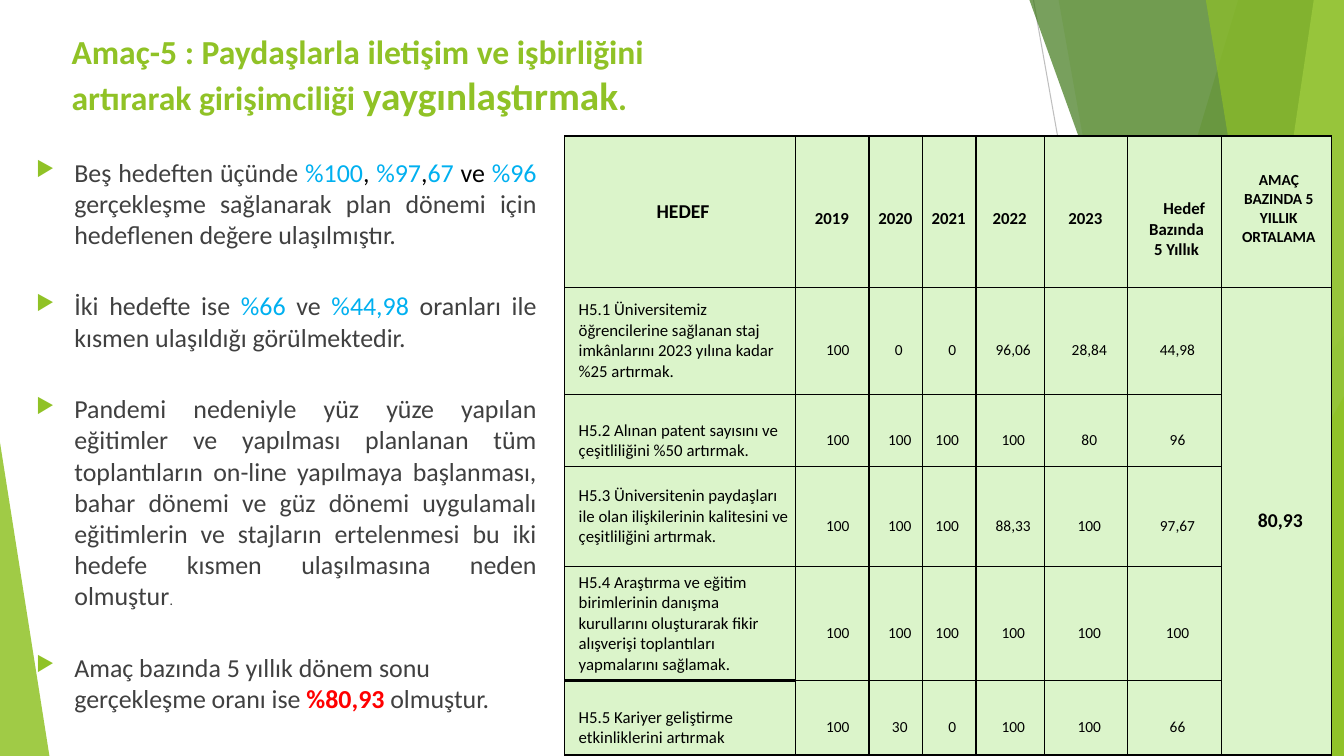
from dataclasses import dataclass

import pptx
import pptx.dml.color
import pptx.enum.shapes
import pptx.enum.text
import pptx.oxml.ns
import pptx.util
from lxml import etree

Inches, Pt = pptx.util.Inches, pptx.util.Pt
PP_ALIGN, MSO_ANCHOR = pptx.enum.text.PP_ALIGN, pptx.enum.text.MSO_ANCHOR
qn = pptx.oxml.ns.qn

GREEN, BLUE, BLACK, GREY, MINT = "90C226", "00B0F0", "000000", "404040", "DBF4CA"
W, H = 13.33, 7.5


@dataclass
class Line:
    start: tuple[float, float]
    end: tuple[float, float]
    color: str


@dataclass
class Band:
    points: list[tuple[float, float]]
    color: str
    alpha: int


@dataclass
class Triangle:
    box: tuple[float, float, float, float]
    apex: int
    color: str
    alpha: int


@dataclass
class Run:
    text: str
    color: str = GREY
    size: float = 18.5
    bold: bool = False
    font: str = "Calibri"


@dataclass
class Goal:
    label: str
    values: list[str]
    height: float


def rgb(color: str) -> pptx.dml.color.RGBColor:
    return pptx.dml.color.RGBColor.from_string(color)


def format_run(r, run: Run) -> None:
    r.font.name, r.font.size, r.font.bold = run.font, Pt(run.size), run.bold
    r.font.color.rgb = rgb(run.color)


def add_runs(p, runs: list[Run]) -> None:
    for run in runs:
        r = p.add_run()
        r.text = run.text
        format_run(r, run)


def paint(sp, color: str, alpha: int) -> None:
    sp.shadow.inherit = False
    sp.line.fill.background()
    sp.fill.solid()
    sp.fill.fore_color.rgb = rgb(color)
    clr = sp._element.spPr.find(qn("a:solidFill"))[0]
    etree.SubElement(clr, qn("a:alpha"), val=str(alpha * 1000))


def draw_line(s, line: Line) -> None:
    c = s.shapes.add_connector(pptx.enum.shapes.MSO_CONNECTOR.STRAIGHT,
                               *map(Inches, line.start + line.end))
    c.line.color.rgb, c.line.width = rgb(line.color), Pt(0.75)
    etree.SubElement(c._element.spPr, qn("a:effectLst"))


def draw_band(s, band: Band) -> None:
    pts = [(Inches(x), Inches(y)) for x, y in band.points]
    fb = s.shapes.build_freeform(*pts[0], scale=1.0)
    fb.add_line_segments(pts[1:], close=True)
    paint(fb.convert_to_shape(), band.color, band.alpha)


def draw_triangle(s, tri: Triangle) -> None:
    sp = s.shapes.add_shape(pptx.enum.shapes.MSO_SHAPE.ISOSCELES_TRIANGLE,
                            *map(Inches, tri.box))
    sp.adjustments[0] = tri.apex
    paint(sp, tri.color, tri.alpha)


def add_bullet(p) -> None:
    pPr = p._p.get_or_add_pPr()
    pPr.set("marL", str(Inches(0.38)))
    pPr.set("indent", str(-Inches(0.38)))
    clr = etree.SubElement(pPr, qn("a:buClr"))
    etree.SubElement(clr, qn("a:srgbClr"), val=GREEN)
    etree.SubElement(pPr, qn("a:buSzPct"), val="80000")
    etree.SubElement(pPr, qn("a:buChar"), char="▶")


def border(cell, side: str, width: float = 1) -> None:
    tcPr = cell._tc.get_or_add_tcPr()
    ln = etree.SubElement(tcPr, qn(f"a:ln{side}"), w=str(Pt(width)))
    fill = etree.SubElement(ln, qn("a:solidFill"))
    etree.SubElement(fill, qn("a:srgbClr"), val=BLACK)


def fill_cell(cell, text: str, size: float, bold: bool, align,
              margins: tuple[float, float, float, float]) -> None:
    cell.margin_left, cell.margin_top, cell.margin_right, cell.margin_bottom = map(Inches, margins)
    cell.vertical_anchor = MSO_ANCHOR.MIDDLE
    cell.text_frame.text = text
    for p in cell.text_frame.paragraphs:
        p.alignment = align
        for r in p.runs:
            format_run(r, Run(text, BLACK, size, bold))


BACKDROP = [
    Line((10.25, 0), (11.58, H), "BFBFBF"),
    Line((W, 4.03), (8.12, H), "D9D9D9"),
    Band([(12.28, 0), (W, 0), (W, H), (10.04, H)], GREEN, 30),
    Band([(10.5, 0), (W, 0), (W, H), (11.83, H)], GREEN, 20),
    Triangle((9.77, 3.33, 3.56, 4.17), 1, "54A021", 72),
    Band([(10.21, 0), (W, 0), (W, H), (12.91, H)], "3F7819", 70),
    Band([(13.03, 0), (W, 0), (W, H), (11.92, H)], "C0E474", 70),
    Band([(11.96, 0), (W, 0), (W, H), (13.18, H)], GREEN, 65),
    Triangle((11.34, 3.93, 1.99, 3.57), 1, GREEN, 80),
    Triangle((0, 4.39, 0.49, 3.11), 0, GREEN, 85),
]
DRAW = {Line: draw_line, Band: draw_band, Triangle: draw_triangle}

TITLE = [Run("Amaç-5 : Paydaşlarla iletişim ve işbirliğini artırarak girişimciliği ", GREEN, 24, True),
         Run("yaygınlaştırmak", GREEN, 28, True), Run(".", GREEN, 24, True)]

FINDINGS = [
    [Run("Beş hedeften üçünde "), Run("%100", BLUE), Run(",", BLACK), Run(" %97", BLUE),
     Run(",", BLACK), Run("67 ", BLUE), Run("ve", BLACK), Run(" %96 ", BLUE),
     Run("gerçekleşme sağlanarak plan dönemi için hedeflenen değere ulaşılmıştır.")],
    [Run("İki hedefte ise "), Run("%66 ", BLUE), Run("ve "), Run("%44,98 ", BLUE),
     Run("oranları ile kısmen ulaşıldığı görülmektedir.")],
    [Run("Pandemi nedeniyle yüz yüze yapılan eğitimler ve yapılması planlanan tüm toplantıların "
         "on-line yapılmaya başlanması, bahar dönemi ve güz dönemi uygulamalı eğitimlerin ve "
         "stajların ertelenmesi bu iki hedefe kısmen ulaşılmasına neden olmuştur"),
     Run(".", size=11.1, font="Roboto")],
    [Run("Amaç bazında 5 yıllık dönem sonu gerçekleşme oranı ise "),
     Run("%80,93 ", "FF0000", bold=True), Run("olmuştur.")],
]

YEARS = ["2019", "2020", "2021", "2022", "2023"]
COLUMNS = [2.29, 0.73, 0.53, 0.53, 0.68, 0.82, 0.94, 1.09]
VALUE_LEFT = [0.16, 0.13, 0.01, 0.11, 0.12, 0.11]
GOALS = [
    Goal("H5.1 Üniversitemiz öğrencilerine sağlanan staj imkânlarını 2023 yılına kadar %25 artırmak.",
         ["100", "0", "0", "96,06", "28,84", "44,98"], 1.06),
    Goal("H5.2 Alınan patent sayısını ve çeşitliliğini %50 artırmak.",
         ["100", "100", "100", "100", "80", "96"], 0.72),
    Goal("H5.3 Üniversitenin paydaşları ile olan ilişkilerinin kalitesini ve çeşitliliğini artırmak.",
         ["100", "100", "100", "88,33", "100", "97,67"], 0.99),
    Goal("H5.4 Araştırma ve eğitim birimlerinin danışma kurullarını oluşturarak fikir alışverişi "
         "toplantıları yapmalarını sağlamak.", ["100"] * 6, 1.13),
    Goal("H5.5 Kariyer geliştirme etkinliklerini artırmak",
         ["100", "30", "0", "100", "100", "66"], 0.74),
]


def add_goal_table(s) -> None:
    heights = [1.5] + [g.height for g in GOALS]
    frame = s.shapes.add_table(len(heights), len(COLUMNS), Inches(5.6), Inches(1.35),
                               Inches(sum(COLUMNS)), Inches(sum(heights)))
    table = frame.table
    table.first_row = table.horz_banding = False
    for column, width in zip(table.columns, COLUMNS):
        column.width = Inches(width)
    for row, height in zip(table.rows, heights):
        row.height = Inches(height)

    # Borders and fills, with a heavier rule above the last goal
    last = len(GOALS)
    for i in range(len(heights)):
        for j in range(len(COLUMNS)):
            cell = table.cell(i, j)
            for side in "LRTB":
                heavy = j == 0 and (i, side) in ((last, "T"), (last - 1, "B"))
                border(cell, side, 2 if heavy else 1)
            cell.fill.solid()
            cell.fill.fore_color.rgb = rgb(MINT)

    # Header row
    mid = PP_ALIGN.CENTER
    fill_cell(table.cell(0, 0), "HEDEF", 14, True, mid, (0.13, 0.07, 0.07, 0.07))
    for j, year in enumerate(YEARS, 1):
        fill_cell(table.cell(0, j), year, 12, True, mid, (0.03, 0.21, 0.04, 0.07))
    five_year = table.cell(0, 6)
    fill_cell(five_year, "Hedef\nBazında 5 Yıllık", 12, True, mid, (0.18, 0.42, 0.14, 0.07))
    five_year.text_frame.paragraphs[0]._p.get_or_add_pPr().set("marL", str(Inches(0.15)))
    fill_cell(table.cell(0, 7), "AMAÇ BAZINDA 5 YILLIK ORTALAMA", 11, True, mid,
              (0.13, 0.01, 0.09, 0.07))

    # Goals and the overall average
    for i, goal in enumerate(GOALS, 1):
        top = 0.26 if goal.label.startswith(("H5.2", "H5.5")) else 0.06
        fill_cell(table.cell(i, 0), goal.label, 12, False, PP_ALIGN.LEFT, (0.14, top, 0.06, 0.06))
        for j, (value, left) in enumerate(zip(goal.values, VALUE_LEFT), 1):
            left = 0.11 if value == "0" else left
            fill_cell(table.cell(i, j), value, 11, False, mid, (left, 0.25, 0.05, 0.06))
    table.cell(1, 7).merge(table.cell(last, 7))
    fill_cell(table.cell(1, 7), "80,93", 14, True, mid, (0.12, 0.07, 0.05, 0.07))


def main() -> None:
    prs = pptx.Presentation()
    prs.slide_width, prs.slide_height = Inches(W), Inches(H)
    s = prs.slides.add_slide(prs.slide_layouts[5])

    # Backdrop
    for item in BACKDROP:
        DRAW[type(item)](s, item)

    # Title
    title = s.shapes.title
    title.left, title.top, title.width, title.height = map(Inches, (0.61, 0.26, 6.05, 1.09))
    tf = title.text_frame
    tf.auto_size, tf.vertical_anchor = pptx.enum.text.MSO_AUTO_SIZE.NONE, MSO_ANCHOR.TOP
    tf.paragraphs[0].alignment = PP_ALIGN.LEFT
    add_runs(tf.paragraphs[0], TITLE)

    # Findings
    tf = s.shapes.add_textbox(*map(Inches, (0.26, 1.5, 5.16, 5.7))).text_frame
    tf.word_wrap = True
    for i, runs in enumerate(FINDINGS):
        p = tf.add_paragraph() if i else tf.paragraphs[0]
        p.alignment = PP_ALIGN.LEFT if i == len(FINDINGS) - 1 else PP_ALIGN.JUSTIFY
        p.space_before = Pt(29 if i else 0)
        add_bullet(p)
        add_runs(p, runs)

    add_goal_table(s)
    prs.save("out.pptx")


if __name__ == "__main__":
    main()
